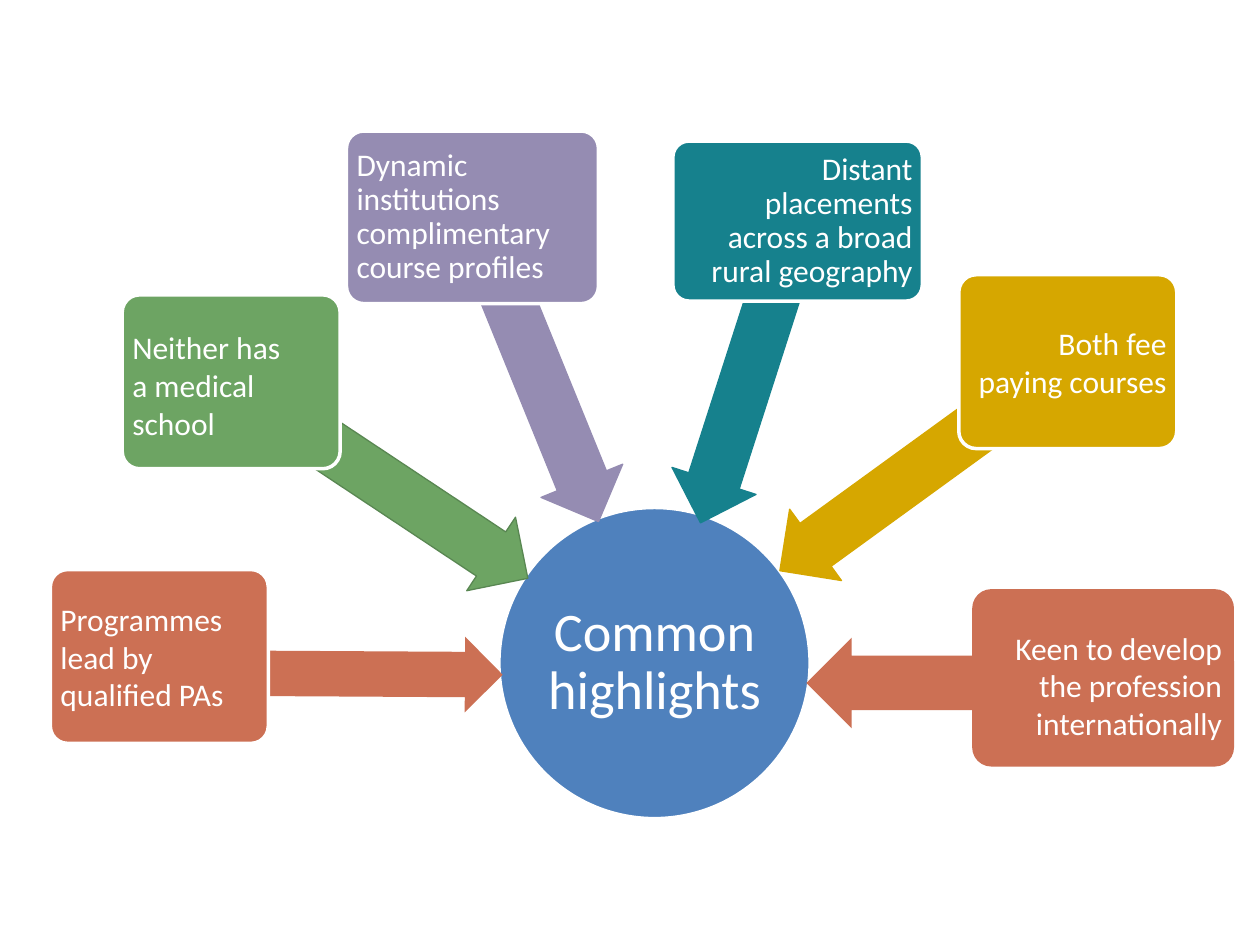
from math import atan2, degrees, hypot

from pptx import Presentation
from pptx.dml.color import RGBColor
from pptx.enum.shapes import MSO_SHAPE
from pptx.enum.text import MSO_ANCHOR, PP_ALIGN
from pptx.util import Inches, Pt

ELLIPSE = MSO_SHAPE.OVAL
BOX = MSO_SHAPE.ROUNDED_RECTANGLE
ARROW = MSO_SHAPE.LEFT_ARROW
LEFT, CENTER, RIGHT = PP_ALIGN.LEFT, PP_ALIGN.CENTER, PP_ALIGN.RIGHT
MIDDLE = MSO_ANCHOR.MIDDLE

WIDTH, HEIGHT = 10, 7.5
COLORS = {
    "white": "FFFFFF", "blue": "4F81BD", "coral": "CC7054", "green": "6DA463",
    "dark green": "598752", "purple": "958CB2", "teal": "16818D", "gold": "D6A700",
}

# Positions and sizes are percentages of the slide; thickness is in inches.
HUB = {"text": ["Common highlights"], "at": (39.6, 53.7, 24.7, 32.93)}
HIGHLIGHTS = [
    {"text": ["Programmes lead by qualified PAs"], "at": (4, 60.27, 17.3, 18.4),
     "color": "coral", "tail": (14.1, 71.2), "tip": (39.9, 71.4), "thickness": 0.6},
    {"text": ["Neither has", "a medical school"], "at": (9.7, 31.2, 17.3, 18.4),
     "color": "green", "edge": "dark green", "drop": 0.05,
     "tail": (16.8, 39), "tip": (41.9, 61.2)},
    {"text": ["Dynamic institutions complimentary course profiles"],
     "at": (27.5, 13.87, 20, 18.27), "color": "purple", "edge": "purple", "spacing": 0.9,
     "tail": (38.3, 25.07), "tip": (47.5, 55.2)},
    {"text": ["Distant placements across a broad rural geography"],
     "at": (53.4, 14.93, 19.8, 16.93), "color": "teal", "edge": "teal", "spacing": 0.9,
     "align": RIGHT, "tail": (63.9, 20.93), "tip": (55.6, 55.33)},
    {"text": ["Both fee paying courses"], "at": (76.1, 29.07, 17.3, 18.4),
     "color": "gold", "edge": "gold", "align": RIGHT,
     "tail": (86, 37.07), "tip": (61.9, 60.4)},
    {"text": ["Keen to develop the profession internationally"],
     "at": (77.3, 62.53, 20.5, 18.4), "color": "coral", "outline": "coral",
     "align": RIGHT, "drop": 0.12, "tail": (97.5, 72.27), "tip": (64, 72.27),
     "thickness": 0.72},
]


def rgb(name):
    return RGBColor.from_string(COLORS[name])


def inches(point):
    return point[0] * WIDTH / 100, point[1] * HEIGHT / 100


def add_shape(slide, kind, place, fill, outline, outline_width):
    shape = slide.shapes.add_shape(kind, *[Inches(value) for value in place])
    shape.shadow.inherit = False
    shape.fill.solid()
    shape.fill.fore_color.rgb = rgb(fill)
    if outline:
        shape.line.color.rgb = rgb(outline)
        shape.line.width = Pt(outline_width)
    else:
        shape.line.fill.background()
    return shape


def write_text(shape, lines, size, align, spacing, inset, drop=0):
    frame = shape.text_frame
    frame.word_wrap = True
    frame.vertical_anchor = MIDDLE
    frame.margin_left = frame.margin_right = frame.margin_bottom = Inches(inset)
    frame.margin_top = Inches(inset + drop)
    frame.text = "\n".join(lines)
    for paragraph in frame.paragraphs:
        paragraph.alignment = align
        paragraph.line_spacing = spacing
        paragraph.font.name = "Calibri"
        paragraph.font.size = Pt(size)
        paragraph.font.color.rgb = rgb("white")


def add_arrow(slide, item):
    tail_x, tail_y = inches(item["tail"])
    tip_x, tip_y = inches(item["tip"])
    length = hypot(tip_x - tail_x, tip_y - tail_y)
    thickness = item.get("thickness", 0.7)
    place = ((tail_x + tip_x - length) / 2, (tail_y + tip_y - thickness) / 2,
             length, thickness)
    arrow = add_shape(slide, ARROW, place, item["color"], item.get("edge"), 0.75)
    arrow.adjustments[0] = 0.6
    arrow.adjustments[1] = 0.5
    arrow.rotation = degrees(atan2(tail_y - tip_y, tail_x - tip_x)) % 360


def add_box(slide, item):
    place = inches(item["at"][:2]) + inches(item["at"][2:])
    box = add_shape(slide, BOX, place, item["color"], item.get("outline", "white"), 2)
    box.adjustments[0] = 0.1
    write_text(box, item["text"], 18, item.get("align", LEFT),
               item.get("spacing", 1.0), 0.04, item.get("drop", 0))


def main():
    presentation = Presentation()
    presentation.slide_width = Inches(WIDTH)
    presentation.slide_height = Inches(HEIGHT)
    slide = presentation.slides.add_slide(presentation.slide_layouts[6])

    hub_place = inches(HUB["at"][:2]) + inches(HUB["at"][2:])
    hub = add_shape(slide, ELLIPSE, hub_place, "blue", "white", 2)
    write_text(hub, HUB["text"], 31, CENTER, 0.9, 0.02)
    for item in HIGHLIGHTS:
        add_arrow(slide, item)
        add_box(slide, item)

    presentation.save("out.pptx")


if __name__ == "__main__":
    main()
